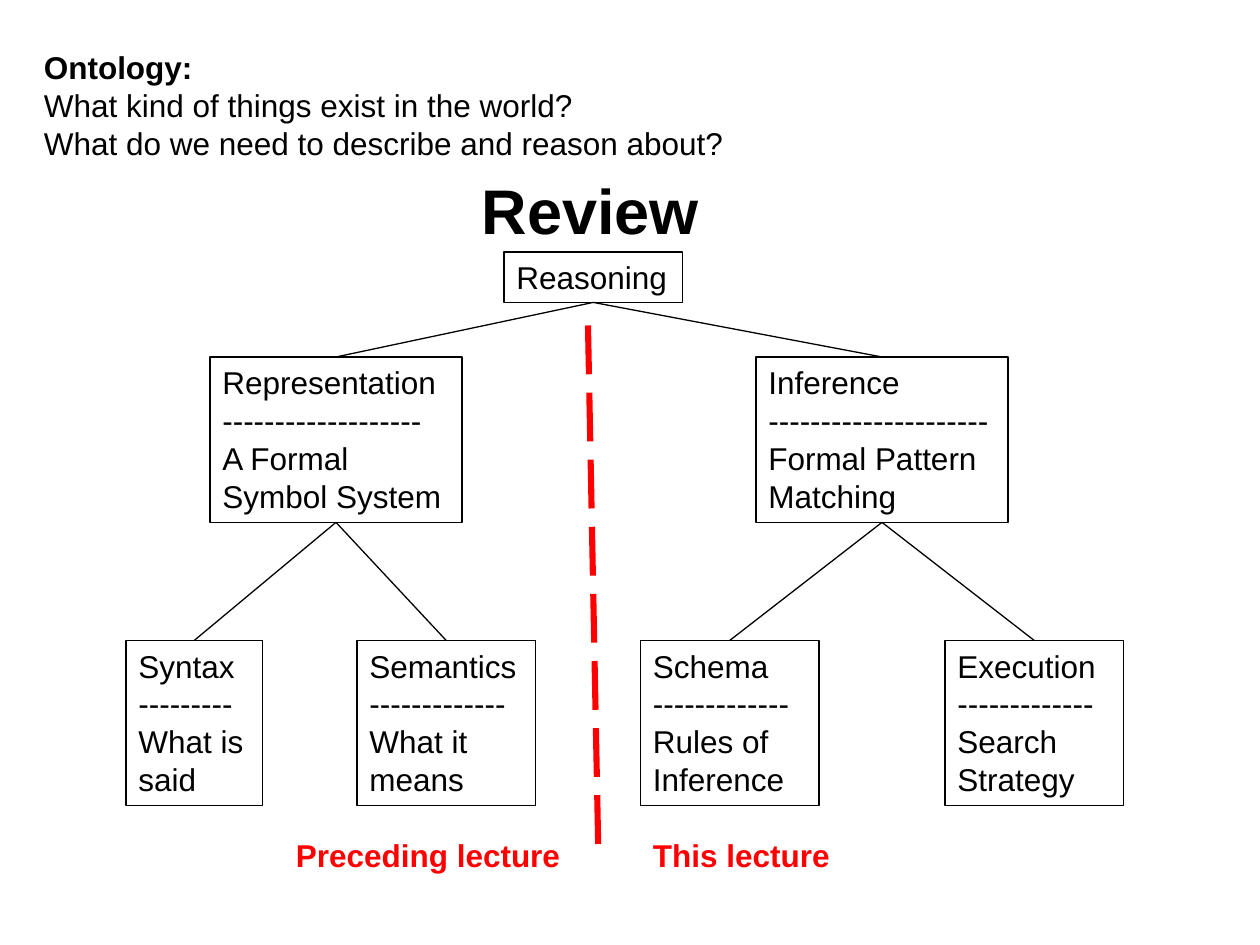
"""Build the review slide: a tree of reasoning topics split between two lectures."""
from lxml import etree
from pptx import Presentation
from pptx.dml.color import RGBColor
from pptx.enum.dml import MSO_LINE
from pptx.enum.shapes import MSO_CONNECTOR, MSO_SHAPE
from pptx.enum.text import MSO_ANCHOR, MSO_AUTO_SIZE, PP_ALIGN
from pptx.oxml.ns import qn
from pptx.util import Inches, Pt

STRAIGHT = MSO_CONNECTOR.STRAIGHT
RECTANGLE = MSO_SHAPE.RECTANGLE
LONG_DASH = MSO_LINE.LONG_DASH
LEFT, CENTER = PP_ALIGN.LEFT, PP_ALIGN.CENTER
TOP = MSO_ANCHOR.TOP
FIT_SHAPE = MSO_AUTO_SIZE.SHAPE_TO_FIT_TEXT
TOP_SIDE, BOTTOM_SIDE = 0, 2

THEME = {
    "font": "Arial",
    "ink": RGBColor(0, 0, 0),
    "accent": RGBColor(255, 0, 0),
    "body": Pt(18),
    "title": Pt(36),
    "thin": Pt(0.75),
    "thick": Pt(3.5),
}

prs = Presentation()
prs.slide_width, prs.slide_height = Inches(10), Inches(7.5)
UNIT = prs.slide_width / 120
LINE_ROWS, BLOCK_ROWS = 4.8, 15.75

slide = prs.slides.add_slide(prs.slide_layouts[5])


def write(holder, text, size=THEME["body"], color=THEME["ink"], bold=False,
          bold_first=False, align=LEFT):
    frame = holder.text_frame
    frame.text = text
    frame.word_wrap = True
    frame.auto_size = FIT_SHAPE
    frame.vertical_anchor = TOP
    for index, paragraph in enumerate(frame.paragraphs):
        paragraph.alignment = align
        font = paragraph.runs[0].font
        font.name, font.size = THEME["font"], size
        font.bold = bold or (bold_first and index == 0)
        font.color.rgb = color


def draw_line(start, end, color=THEME["ink"], width=THEME["thin"]):
    line = slide.shapes.add_connector(
        STRAIGHT, *(int(value * UNIT) for value in (*start, *end)))
    line.line.color.rgb, line.line.width = color, width
    etree.SubElement(line._element.spPr, qn("a:effectLst"))
    return line


heading = slide.shapes.title
heading.left, heading.top, heading.width, heading.height = (
    int(value * UNIT) for value in (38.2, 15.75, 36, 8.5))
write(heading, "Review", size=THEME["title"], bold=True, align=CENTER)

captions = [
    ("Ontology:\nWhat kind of things exist in the world?\n"
     "What do we need to describe and reason about?",
     (3, 4, 69, 12.1), {"bold_first": True}),
    ("Preceding lecture", (27, 79, 28, LINE_ROWS),
     {"color": THEME["accent"], "bold": True}),
    ("This lecture", (61, 79, 28, LINE_ROWS),
     {"color": THEME["accent"], "bold": True}),
]
for text, place, style in captions:
    caption = slide.shapes.add_textbox(*(int(value * UNIT) for value in place))
    write(caption, text, **style)

topics = [
    ("Reasoning", 0, "", 48, 24, 17, None),
    ("Representation", 19, "A Formal Symbol System", 20, 34, 24, "Reasoning"),
    ("Inference", 21, "Formal Pattern Matching", 72, 34, 24, "Reasoning"),
    ("Syntax", 9, "What is said", 12, 61, 13, "Representation"),
    ("Semantics", 13, "What it means", 34, 61, 17, "Representation"),
    ("Schema", 13, "Rules of Inference", 61, 61, 17, "Inference"),
    ("Execution", 13, "Search Strategy", 90, 61, 17, "Inference"),
]
nodes = {}
for topic, dashes, meaning, column, row, columns, parent in topics:
    rows = BLOCK_ROWS if meaning else LINE_ROWS
    node = slide.shapes.add_shape(
        RECTANGLE, *(int(value * UNIT) for value in (column, row, columns, rows)))
    node.shadow.inherit = False
    node.fill.background()
    node.line.color.rgb, node.line.width = THEME["ink"], THEME["thin"]
    write(node, f"{topic}\n{'-' * dashes}\n{meaning}" if meaning else topic)
    nodes[topic] = node
    if parent:
        branch = draw_line((0, 0), (column, row))
        branch.begin_connect(nodes[parent], BOTTOM_SIDE)
        branch.end_connect(node, TOP_SIDE)

lecture_divider = draw_line((56, 31), (57, 82), THEME["accent"], THEME["thick"])
lecture_divider.line.dash_style = LONG_DASH

prs.save("out.pptx")
